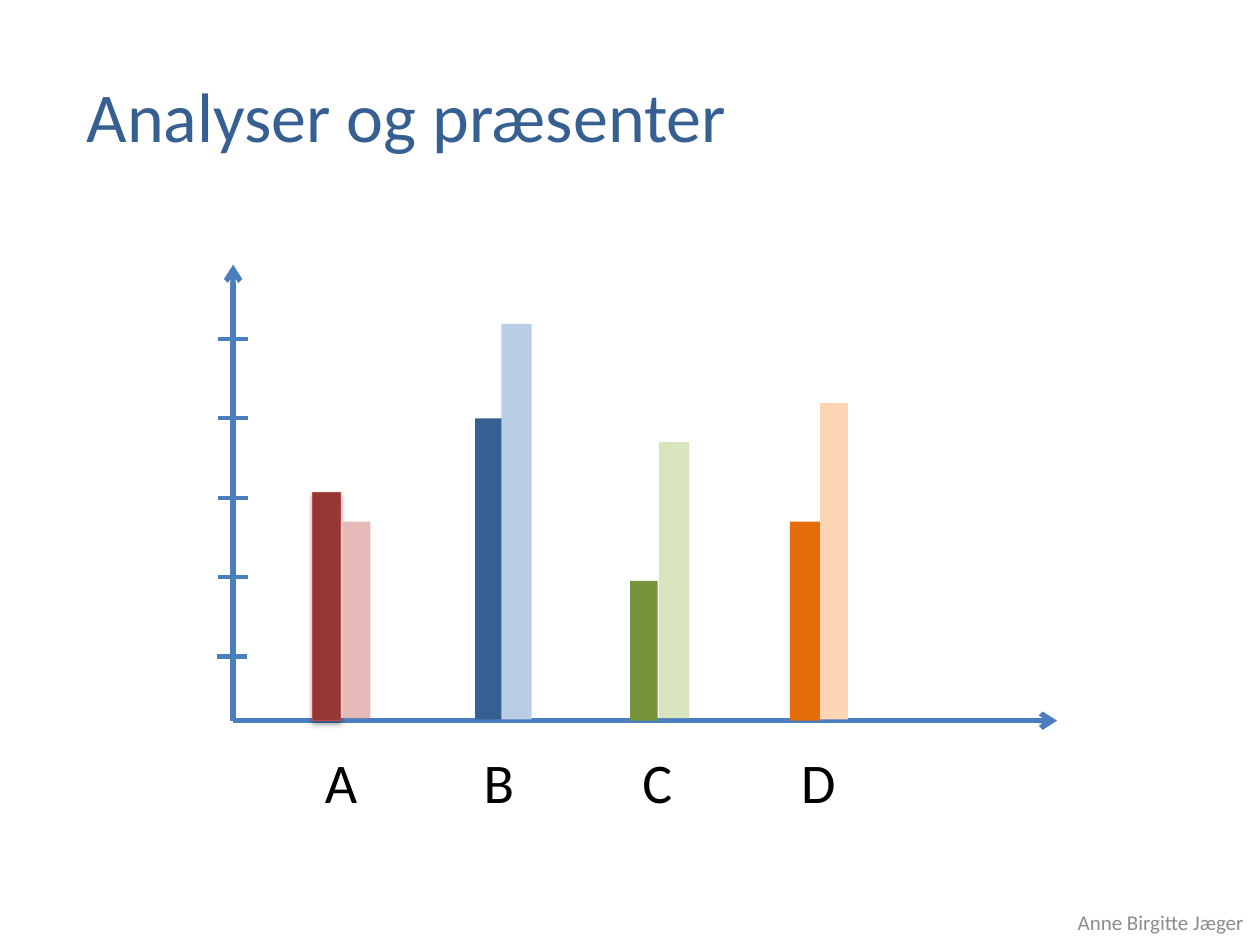
"""Build a slide with a hand-drawn chart of paired bars for A to D."""
import lxml.etree
import pptx
import pptx.dml.color
import pptx.enum.shapes
import pptx.enum.text
import pptx.oxml
import pptx.oxml.ns
import pptx.util

Inches = pptx.util.Inches
Pt = pptx.util.Pt
qn = pptx.oxml.ns.qn
color = pptx.dml.color.RGBColor.from_string

deck = pptx.Presentation()
deck.slide_width = Inches(10)
deck.slide_height = Inches(7.5)
page = deck.slides.add_slide(deck.slide_layouts[6])


def add_line(x1, y1, x2, y2, width, arrow=False):
    line = page.shapes.add_connector(
        pptx.enum.shapes.MSO_CONNECTOR.STRAIGHT,
        Inches(x1), Inches(y1), Inches(x2), Inches(y2))
    line.line.color.rgb = color("4B7EBC")
    line.line.width = Pt(width)
    properties = line._element.spPr
    lxml.etree.SubElement(properties, qn("a:effectLst"))
    if arrow:
        outline = properties.find(qn("a:ln"))
        lxml.etree.SubElement(outline, qn("a:tailEnd"), type="arrow")


def add_text(text, left, top, width, height, size, shade):
    box = page.shapes.add_textbox(
        Inches(left), Inches(top), Inches(width), Inches(height))
    frame = box.text_frame
    frame.text = text
    frame.word_wrap = True
    frame.auto_size = pptx.enum.text.MSO_AUTO_SIZE.SHAPE_TO_FIT_TEXT
    font = frame.paragraphs[0].runs[0].font
    font.name = "Calibri"
    font.size = Pt(size)
    font.color.rgb = color(shade)
    return frame


bars = [
    (2.48, 3.91, 0.22, 1.81, "953735"),
    (2.72, 4.14, 0.22, 1.56, "E6B9B8"),
    (3.77, 3.32, 0.22, 2.39, "376092"),
    (3.98, 2.57, 0.24, 3.14, "B9CDE5"),
    (5.00, 4.61, 0.22, 1.11, "77933C"),
    (5.23, 3.51, 0.24, 2.19, "D7E4BD"),
    (6.27, 4.14, 0.24, 1.58, "E46C0A"),
    (6.51, 3.20, 0.22, 2.51, "FCD5B5"),
]
origin_x, origin_y = 1.85, 5.72

add_line(origin_x, origin_y, origin_x, 2.1, 3, arrow=True)
add_line(origin_x, origin_y, 8.39, origin_y, 3, arrow=True)
for step in range(5):
    tick_left = 1.72 if step == 0 else 1.73
    tick_y = 5.21 - 0.63 * step
    add_line(tick_left, tick_y, tick_left + 0.24, tick_y, 2.5)

for index, (left, top, width, height, shade) in enumerate(bars):
    bar = page.shapes.add_shape(
        pptx.enum.shapes.MSO_SHAPE.RECTANGLE,
        Inches(left), Inches(top), Inches(width), Inches(height))
    bar.shadow.inherit = False
    bar.fill.solid()
    bar.fill.fore_color.rgb = color(shade)
    if index > 0:
        bar.line.fill.background()
        continue
    bar.line.color.rgb = color("BF4C48")
    bar.line.width = Pt(0.75)
    effects = bar._element.spPr.find(qn("a:effectLst"))
    shadow = lxml.etree.SubElement(
        effects, qn("a:outerShdw"), blurRad=str(Pt(3.1)), dist=str(Pt(1.8)),
        dir="5400000", rotWithShape="0")
    shadow_color = lxml.etree.SubElement(shadow, qn("a:srgbClr"), val="000000")
    lxml.etree.SubElement(shadow_color, qn("a:alpha"), val="35000")

for index, letter in enumerate("ABCD"):
    add_text(letter, 2.48 + 1.26 * index, 5.88, 0.47, 0.64, 32, "000000")

add_text("Analyser og præsenter", 0.59, 0.53, 5.91, 0.77, 40, "376092")

footer = add_text("Anne Birgitte Jæger", 8.4, 7.12, 1.57, 0.4, 12, "8C8C8C")
footer.auto_size = pptx.enum.text.MSO_AUTO_SIZE.NONE
footer.vertical_anchor = pptx.enum.text.MSO_ANCHOR.MIDDLE
footer.paragraphs[0].alignment = pptx.enum.text.PP_ALIGN.RIGHT

deck.save("out.pptx")
